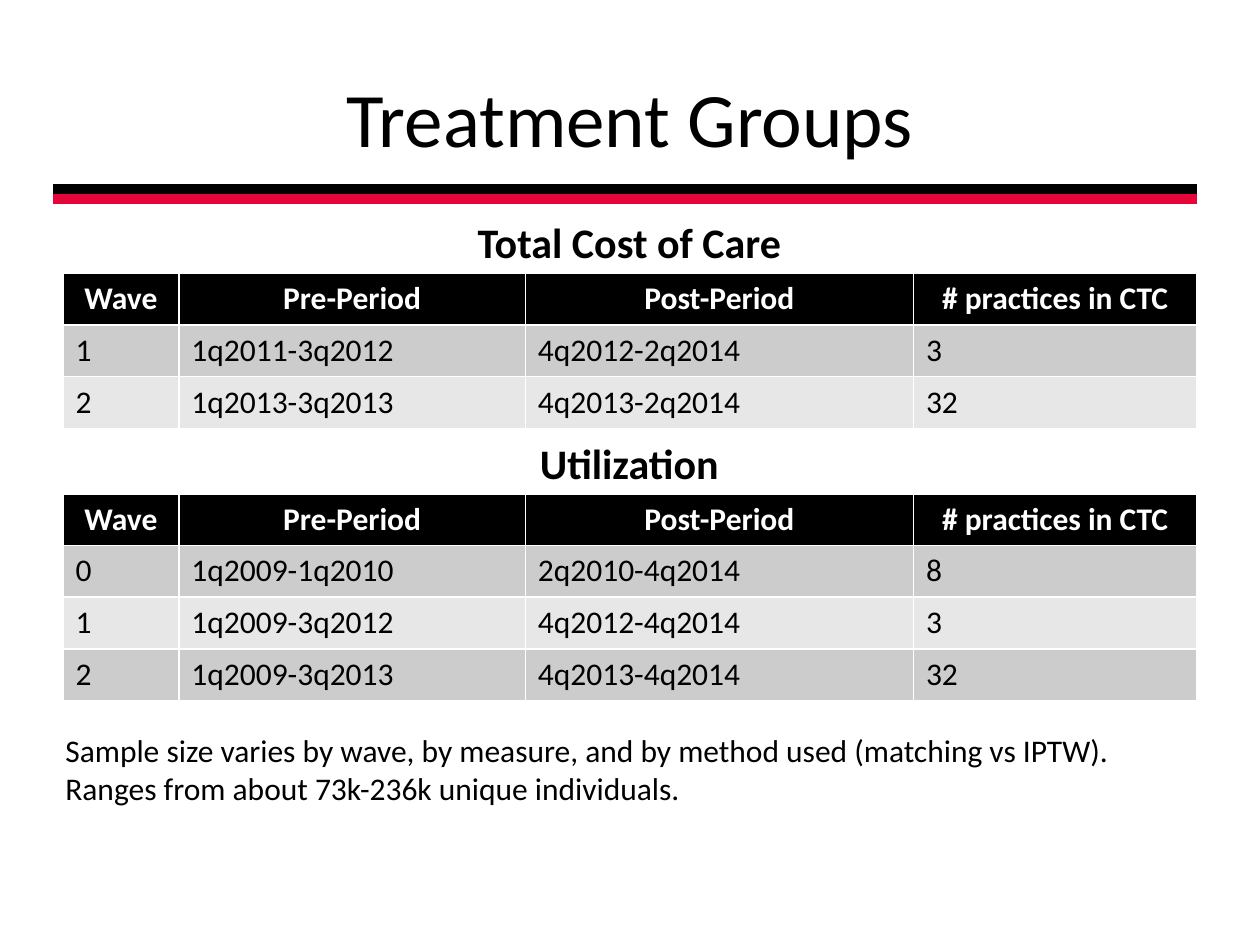
from dataclasses import dataclass

from lxml import etree
from pptx import Presentation
from pptx.dml.color import RGBColor
from pptx.enum.shapes import MSO_CONNECTOR
from pptx.enum.text import MSO_ANCHOR, PP_ALIGN
from pptx.oxml.ns import qn
from pptx.slide import Slide
from pptx.util import Inches, Pt

LINE = MSO_CONNECTOR.STRAIGHT
TOP, MIDDLE = MSO_ANCHOR.TOP, MSO_ANCHOR.MIDDLE
LEFT, CENTER = PP_ALIGN.LEFT, PP_ALIGN.CENTER

BLACK = RGBColor(0, 0, 0)
WHITE = RGBColor(255, 255, 255)
RED = RGBColor(0xE5, 0x05, 0x3A)
BANDS = (RGBColor(0xCC, 0xCC, 0xCC), RGBColor(0xE7, 0xE7, 0xE7))

FACE = "Calibri"
TITLE = {"name": FACE, "size": Pt(44), "bold": False}
HEADING = {"name": FACE, "size": Pt(24), "bold": True}
HEADER = {"name": FACE, "size": Pt(18), "bold": True}
BODY = {"name": FACE, "size": Pt(18), "bold": False}

HEADS = ("Wave", "Pre-Period", "Post-Period", "# practices in CTC")
COLS = (0.92, 2.75, 3.08, 2.25)
ROW = 0.41
GAP = 0.5


@dataclass
class Label:
    text: str
    box: tuple
    style: dict
    align: int = CENTER
    anchor: int = TOP


@dataclass
class Group:
    name: str
    top: float
    rows: tuple


@dataclass
class Rule:
    y: float
    color: RGBColor


RULES = (Rule(1.5, BLACK), Rule(1.58, RED))
GROUPS = (
    Group("Total Cost of Care", 1.67, (
        ("1", "1q2011-3q2012", "4q2012-2q2014", "3"),
        ("2", "1q2013-3q2013", "4q2013-2q2014", "32"),
    )),
    Group("Utilization", 3.42, (
        ("0", "1q2009-1q2010", "2q2010-4q2014", "8"),
        ("1", "1q2009-3q2012", "4q2012-4q2014", "3"),
        ("2", "1q2009-3q2013", "4q2013-4q2014", "32"),
    )),
)
LABELS = (
    Label("Treatment Groups", (0.5, 0.3, 9, 1.25), TITLE, anchor=MIDDLE),
    Label("Sample size varies by wave, by measure, and by method used "
          "(matching vs IPTW). Ranges from about 73k-236k unique individuals.",
          (0.42, 5.75, 9.08, 0.71), BODY, LEFT),
)


def write(frame, text: str, style: dict, color: RGBColor, align: int) -> None:
    para = frame.paragraphs[0]
    para.alignment = align
    run = para.add_run()
    run.text = text
    for key, value in style.items():
        setattr(run.font, key, value)
    run.font.color.rgb = color


def draw_rule(slide: Slide, rule: Rule) -> None:
    y = Inches(rule.y)
    line = slide.shapes.add_connector(LINE, Inches(0.42), y, Inches(9.5), y)
    line.line.color.rgb = rule.color
    line.line.width = Pt(6)
    etree.SubElement(line._element.spPr, qn("a:effectLst"))


def draw_label(slide: Slide, label: Label) -> None:
    box = slide.shapes.add_textbox(*map(Inches, label.box))
    frame = box.text_frame
    frame.word_wrap = True
    frame.vertical_anchor = label.anchor
    write(frame, label.text, label.style, BLACK, label.align)


def draw_group(slide: Slide, group: Group) -> None:
    rows = (HEADS, *group.rows)
    shape = slide.shapes.add_table(
        len(rows), len(COLS), Inches(0.5), Inches(group.top + GAP),
        Inches(sum(COLS)), Inches(ROW * len(rows)))
    table = shape.table
    for col, width in zip(table.columns, COLS):
        col.width = Inches(width)
    for r, row in enumerate(rows):
        table.rows[r].height = Inches(ROW)
        if r == 0:
            fill, style, color, align = BLACK, HEADER, WHITE, CENTER
        else:
            fill, style, color, align = BANDS[(r - 1) % 2], BODY, BLACK, LEFT
        for c, text in enumerate(row):
            cell = table.cell(r, c)
            cell.fill.solid()
            cell.fill.fore_color.rgb = fill
            write(cell.text_frame, text, style, color, align)
    draw_label(slide, Label(group.name, (1.33, group.top, 7.33, GAP), HEADING))


def main() -> None:
    deck = Presentation()
    deck.slide_width, deck.slide_height = Inches(10), Inches(7.5)
    slide = deck.slides.add_slide(deck.slide_layouts[6])
    for rule in RULES:
        draw_rule(slide, rule)
    title, note = LABELS
    draw_label(slide, title)
    for group in GROUPS:
        draw_group(slide, group)
    draw_label(slide, note)
    deck.save("out.pptx")


if __name__ == "__main__":
    main()
